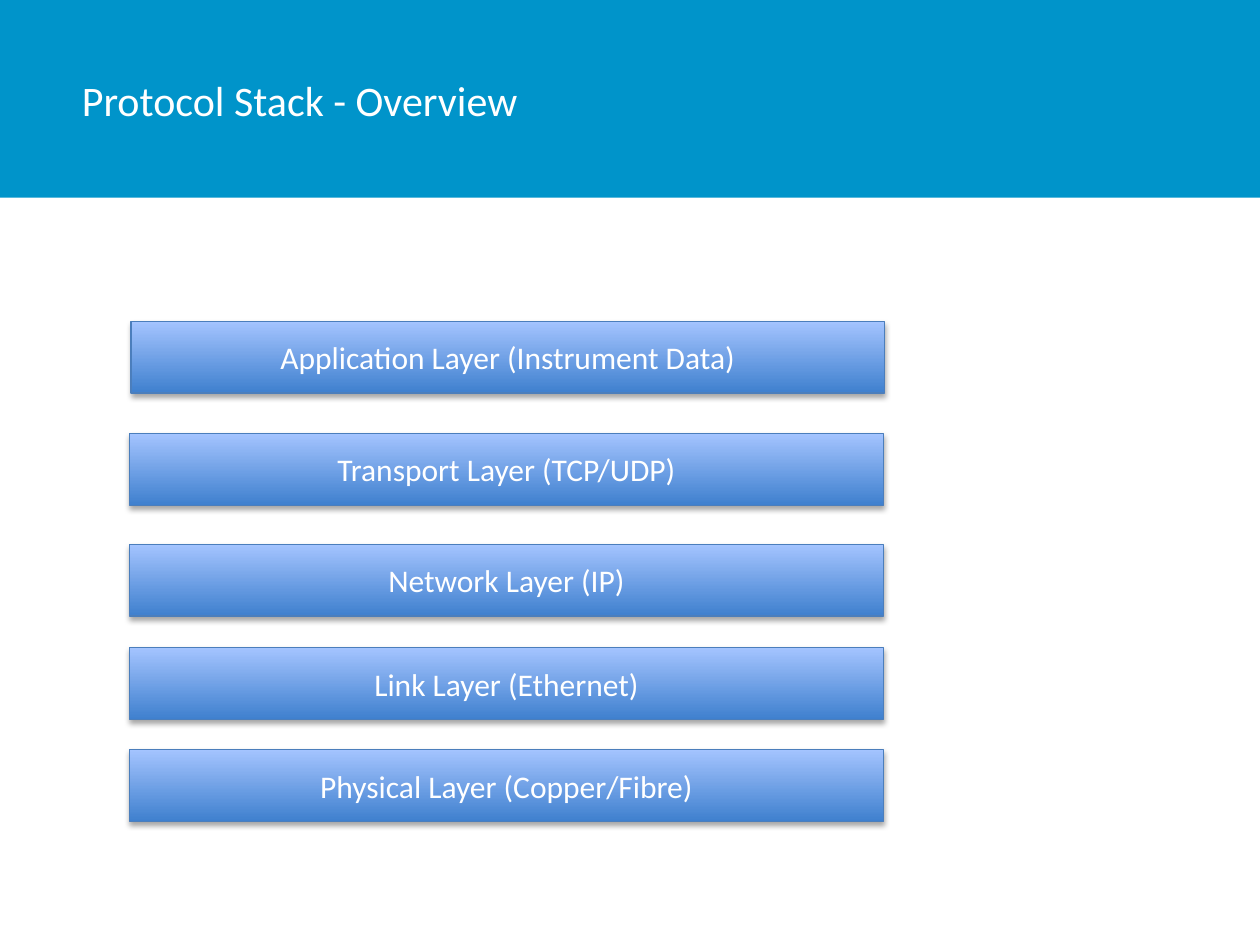
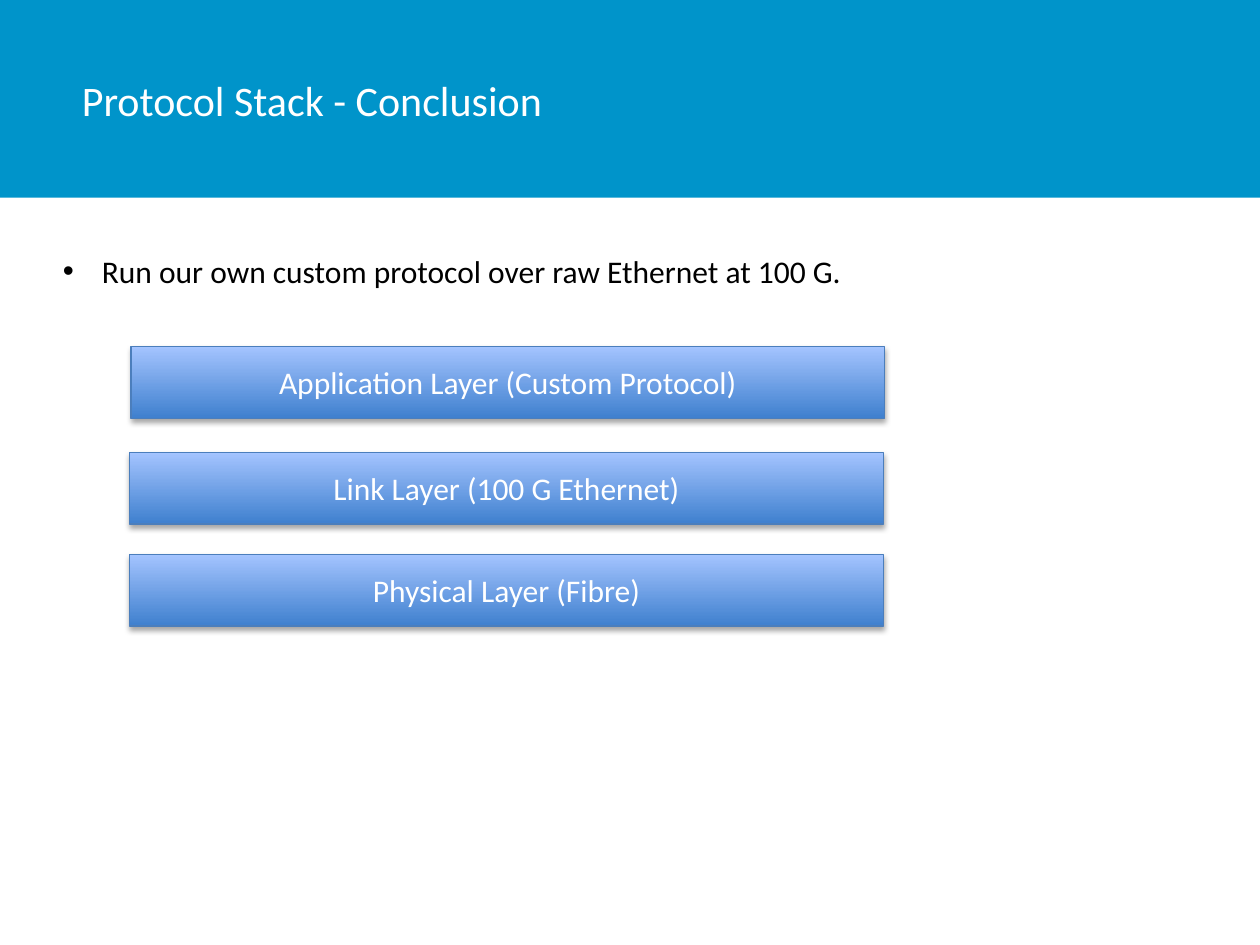
import pptx
import pptx.util
import pptx.dml.color
import pptx.enum.shapes
import pptx.enum.text
import pptx.oxml
import pptx.oxml.ns
import lxml.etree

Inches = pptx.util.Inches
Pt = pptx.util.Pt

COLORS = {
    "band": "0094CA",
    "white": "FFFFFF",
    "black": "000000",
    "layer_bottom": "3F80CE",
    "layer_top": "A4C4FF",
    "layer_line": "4B7EBC",
}
FONT = "Calibri"
LAYER_WIDTH = 5.98
LAYER_HEIGHT = 0.57
SHADOW = (
    f'<a:outerShdw {pptx.oxml.ns.nsdecls("a")} blurRad="{Pt(3.1)}" dist="{Pt(1.8)}" '
    f'dir="5400000" rotWithShape="0"><a:srgbClr val="{COLORS["black"]}">'
    '<a:alpha val="35000"/></a:srgbClr></a:outerShdw>'
)

SLIDES = [
    {
        "title": "Protocol Stack - Overview",
        "bullet": None,
        "layers": [
            ("Application Layer (Instrument Data)", 1.04, 2.55),
            ("Transport Layer (TCP/UDP)", 1.03, 3.44),
            ("Network Layer (IP)", 1.03, 4.32),
            ("Link Layer (Ethernet)", 1.03, 5.14),
            ("Physical Layer (Copper/Fibre)", 1.03, 5.95),
        ],
    },
    {
        "title": "Protocol Stack - Conclusion",
        "bullet": "Run our own custom protocol over raw Ethernet at 100 G.",
        "layers": [
            ("Application Layer (Custom Protocol)", 1.04, 2.75),
            ("Link Layer (100 G Ethernet)", 1.03, 3.59),
            ("Physical Layer (Fibre)", 1.03, 4.4),
        ],
    },
]


def rgb(name):
    return pptx.dml.color.RGBColor.from_string(COLORS[name])


def add_run(paragraph, text, size, color):
    run = paragraph.add_run()
    run.text = text
    run.font.name = FONT
    run.font.size = Pt(size)
    run.font.color.rgb = rgb(color)


presentation = pptx.Presentation()
presentation.slide_width = Inches(10)
presentation.slide_height = Inches(7.5)

for content in SLIDES:
    slide = presentation.slides.add_slide(presentation.slide_layouts[6])

    band = slide.shapes.add_shape(
        pptx.enum.shapes.MSO_SHAPE.RECTANGLE, 0, 0, Inches(10), Inches(1.57)
    )
    band.shadow.inherit = False
    band.fill.solid()
    band.fill.fore_color.rgb = rgb("band")
    band.line.fill.background()

    rule = slide.shapes.add_connector(
        pptx.enum.shapes.MSO_CONNECTOR.STRAIGHT, 0, Inches(1.59), Inches(10), Inches(1.59)
    )
    rule.line.color.rgb = rgb("white")
    rule.line.width = Pt(0.5)
    lxml.etree.SubElement(rule._element.spPr, pptx.oxml.ns.qn("a:effectLst"))

    title = slide.shapes.add_textbox(Inches(0.65), 0, Inches(6.3), Inches(1.58))
    frame = title.text_frame
    frame.word_wrap = True
    frame.vertical_anchor = pptx.enum.text.MSO_ANCHOR.MIDDLE
    frame.margin_left = frame.margin_right = frame.margin_top = frame.margin_bottom = 0
    add_run(frame.paragraphs[0], content["title"], 24, "white")

    for text, left, top in content["layers"]:
        layer = slide.shapes.add_shape(
            pptx.enum.shapes.MSO_SHAPE.RECTANGLE,
            Inches(left), Inches(top), Inches(LAYER_WIDTH), Inches(LAYER_HEIGHT),
        )
        layer.fill.gradient()
        layer.fill.gradient_angle = 90
        for stop, color in zip(layer.fill.gradient_stops, ("layer_bottom", "layer_top")):
            stop.color.rgb = rgb(color)
        layer.line.color.rgb = rgb("layer_line")
        layer.line.width = Pt(0.75)
        layer.shadow.inherit = False
        effects = layer._element.spPr.find(pptx.oxml.ns.qn("a:effectLst"))
        effects.append(pptx.oxml.parse_xml(SHADOW))
        layer.text_frame.vertical_anchor = pptx.enum.text.MSO_ANCHOR.MIDDLE
        paragraph = layer.text_frame.paragraphs[0]
        paragraph.alignment = pptx.enum.text.PP_ALIGN.CENTER
        add_run(paragraph, text, 18, "white")

    if content["bullet"]:
        note = slide.shapes.add_textbox(Inches(0.4), Inches(1.95), Inches(6.45), Inches(0.4))
        note.text_frame.word_wrap = False
        note.text_frame.auto_size = pptx.enum.text.MSO_AUTO_SIZE.SHAPE_TO_FIT_TEXT
        paragraph = note.text_frame.paragraphs[0]
        properties = paragraph._p.get_or_add_pPr()
        properties.set("marL", str(Inches(0.31)))
        properties.set("indent", str(-Inches(0.31)))
        bullet_font = lxml.etree.SubElement(properties, pptx.oxml.ns.qn("a:buFont"))
        bullet_font.set("typeface", "Arial")
        bullet = lxml.etree.SubElement(properties, pptx.oxml.ns.qn("a:buChar"))
        bullet.set("char", "•")
        add_run(paragraph, content["bullet"], 18, "black")

presentation.save("out.pptx")
